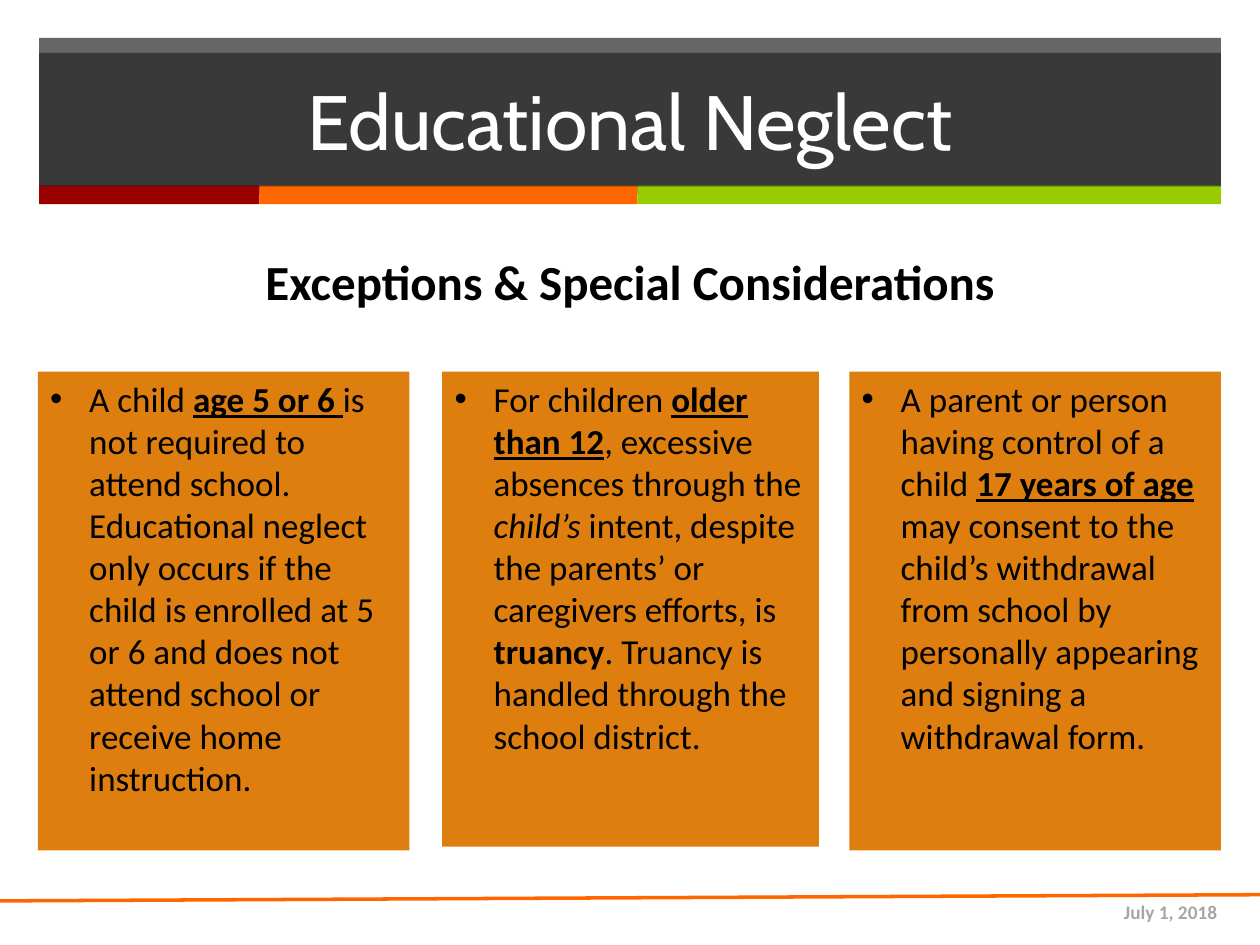
from dataclasses import dataclass

from lxml.etree import SubElement
from pptx import Presentation
from pptx.dml.color import RGBColor
from pptx.enum.shapes import MSO_CONNECTOR as CONNECTOR, MSO_SHAPE as SHAPE
from pptx.enum.text import MSO_ANCHOR as ANCHOR, PP_ALIGN as ALIGN
from pptx.oxml.ns import qn
from pptx.util import Inches, Pt


@dataclass(frozen=True)
class Theme:
    heading_font: str = "Cabin"
    body_font: str = "Calibri"
    banner: str = "262626"
    banner_alpha: int = 70
    red: str = "990000"
    orange: str = "FF6600"
    green: str = "99CC00"
    card: str = "DD7E0E"
    white: str = "FFFFFF"
    black: str = "000000"
    grey: str = "A6A6A6"
    title_size: int = 44
    subtitle_size: int = 28
    body_size: int = 20
    date_size: int = 11


class SlideBuilder:
    def __init__(self, slide, theme):
        self.shapes = slide.shapes
        self.theme = theme

    def block(self, left, top, width, height, color, alpha=None):
        """Filled rectangle without outline; alpha is a percentage."""
        block = self.shapes.add_shape(SHAPE.RECTANGLE, Inches(left), Inches(top),
                                      Inches(width), Inches(height))
        block.shadow.inherit = False
        block.fill.solid()
        block.fill.fore_color.rgb = RGBColor.from_string(color)
        block.line.fill.background()
        if alpha is not None:
            tint = block._element.spPr.find(qn("a:solidFill")).find(qn("a:srgbClr"))
            SubElement(tint, qn("a:alpha"), val=str(alpha * 1000))
        return block

    def add_text(self, shape, runs, size, color, font=None,
                 align=ALIGN.LEFT, anchor=ANCHOR.TOP):
        """Fill one paragraph; runs are (text, marks) with marks from b, i, u."""
        frame = shape.text_frame
        frame.word_wrap = True
        frame.vertical_anchor = anchor
        paragraph = frame.paragraphs[0]
        paragraph.alignment = align
        for text, marks in runs:
            run = paragraph.add_run()
            run.text = text
            run.font.name = font or self.theme.body_font
            run.font.size = Pt(size)
            run.font.color.rgb = RGBColor.from_string(color)
            run.font.bold = "b" in marks
            run.font.italic = "i" in marks
            run.font.underline = "u" in marks
        return paragraph

    def label(self, left, top, width, height, text, size, color, **layout):
        box = self.shapes.add_textbox(Inches(left), Inches(top),
                                      Inches(width), Inches(height))
        self.add_text(box, [(text, "b")], size, color, **layout)

    def card(self, left, top, width, height, runs):
        """Coloured card holding one bulleted paragraph."""
        card = self.block(left, top, width, height, self.theme.card)
        paragraph = self.add_text(card, runs, self.theme.body_size, self.theme.black)
        properties = paragraph._p.get_or_add_pPr()
        indent = Inches(0.31)
        properties.set("marL", str(indent))
        properties.set("indent", str(-indent))
        SubElement(properties, qn("a:buFont"), typeface="Arial")
        SubElement(properties, qn("a:buChar"), char="•")

    def rule(self, x1, y1, x2, y2, color, weight):
        rule = self.shapes.add_connector(CONNECTOR.STRAIGHT, Inches(x1), Inches(y1),
                                         Inches(x2), Inches(y2))
        rule.line.color.rgb = RGBColor.from_string(color)
        rule.line.width = Pt(weight)
        SubElement(rule._element.spPr, qn("a:effectLst"))


MARGIN, CONTENT_WIDTH = 0.31, 9.38

CARDS = [
    (0.3, 2.95, 3.8, [
        ("A child ", ""),
        ("age 5 or 6 ", "bu"),
        ("is not required to attend school. Educational neglect only occurs if "
         "the child is enrolled at 5 or 6 and does not attend school or receive "
         "home instruction.", ""),
    ]),
    (3.51, 2.99, 3.77, [
        ("For children ", ""),
        ("older than 12", "bu"),
        (", excessive absences through the ", ""),
        ("child’s", "i"),
        (" intent, despite the parents’ or caregivers efforts, is ", ""),
        ("truancy", "b"),
        (". Truancy is handled through the school district.", ""),
    ]),
    (6.74, 2.95, 3.8, [
        ("A parent or person having control of a child ", ""),
        ("17 years of age ", "bu"),
        ("may consent to the child’s withdrawal from school by personally "
         "appearing and signing a withdrawal form.", ""),
    ]),
]


def main():
    theme = Theme()
    deck = Presentation()
    deck.slide_width, deck.slide_height = Inches(10), Inches(7.5)
    slide = SlideBuilder(deck.slides.add_slide(deck.slide_layouts[6]), theme)

    # Banner with its coloured stripe
    slide.block(MARGIN, 0.3, CONTENT_WIDTH, 1.24, theme.banner, theme.banner_alpha)
    stripe_left = MARGIN
    for width, color in [(1.75, theme.red), (3, theme.orange), (4.63, theme.green)]:
        slide.block(stripe_left, 1.47, width, 0.15, color)
        stripe_left += width

    # Footer
    slide.label(7.43, 7.04, 2.33, 0.4, "July 1, 2018", theme.date_size, theme.grey,
                align=ALIGN.RIGHT, anchor=ANCHOR.MIDDLE)
    slide.rule(0, 7.15, 10.14, 7.1, theme.orange, 2)

    # Title and subtitle
    title = slide.block(MARGIN, 0.42, CONTENT_WIDTH, 1.06, theme.banner,
                        theme.banner_alpha)
    slide.add_text(title, [("Educational Neglect", "")], theme.title_size, theme.white,
                   theme.heading_font, ALIGN.CENTER, ANCHOR.MIDDLE)
    slide.label(MARGIN, 1.95, CONTENT_WIDTH, 0.7, "Exceptions & Special Considerations",
                theme.subtitle_size, theme.black, align=ALIGN.CENTER)

    # Three considerations
    for left, width, height, runs in CARDS:
        slide.card(left, 2.95, width, height, runs)

    deck.save("out.pptx")


if __name__ == "__main__":
    main()
